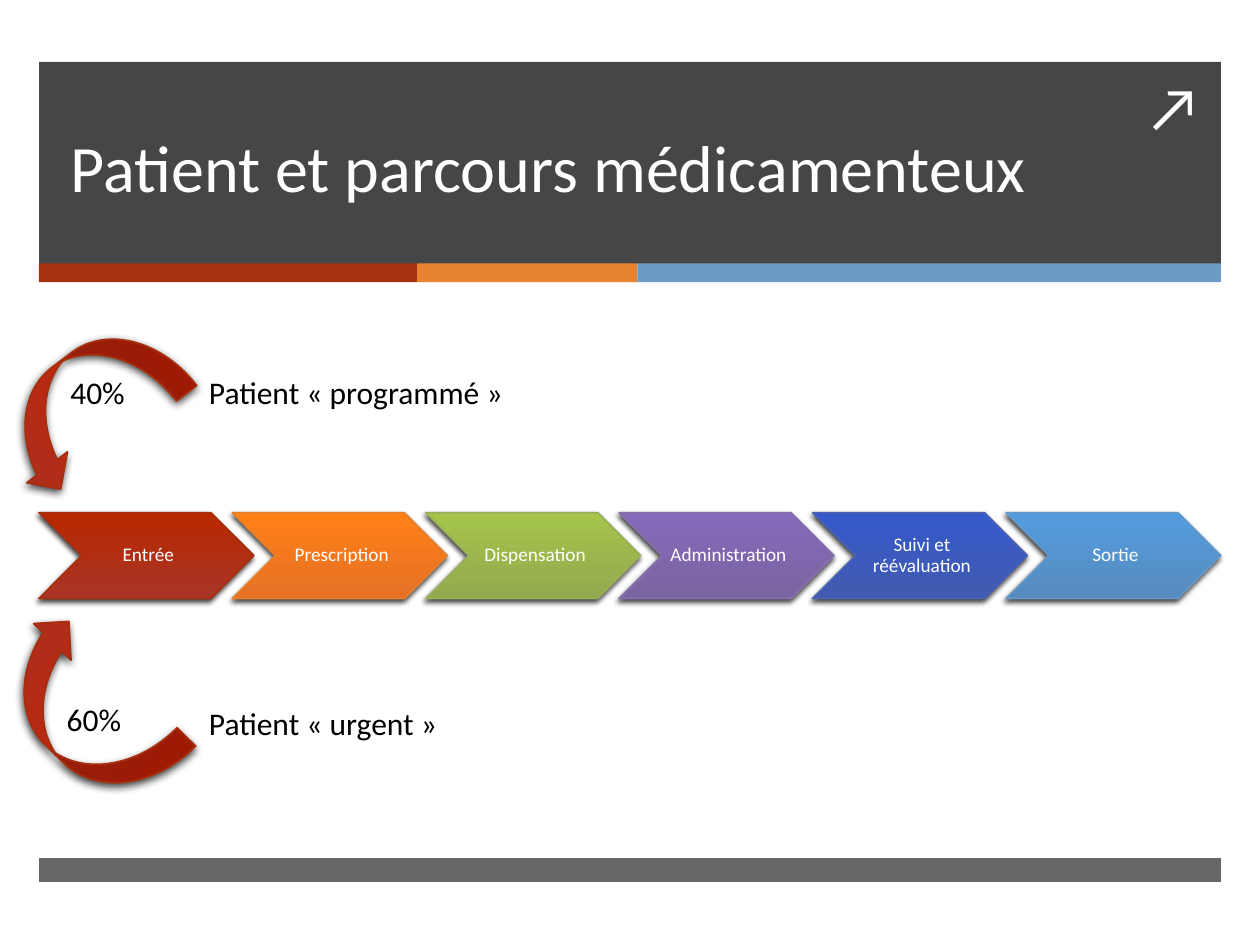
from dataclasses import dataclass

from lxml import etree
from pptx import Presentation
from pptx.dml.color import RGBColor
from pptx.enum.shapes import MSO_SHAPE
from pptx.enum.text import MSO_ANCHOR, MSO_AUTO_SIZE, PP_ALIGN
from pptx.oxml.ns import qn
from pptx.util import Pt

RECTANGLE = MSO_SHAPE.RECTANGLE
CHEVRON = MSO_SHAPE.CHEVRON
RIGHT_ARROW = MSO_SHAPE.CURVED_RIGHT_ARROW
LEFT_ARROW = MSO_SHAPE.CURVED_LEFT_ARROW
MIDDLE, BOTTOM = MSO_ANCHOR.MIDDLE, MSO_ANCHOR.BOTTOM
LEFT, CENTER = PP_ALIGN.LEFT, PP_ALIGN.CENTER
FIT_SHAPE, NO_FIT = MSO_AUTO_SIZE.SHAPE_TO_FIT_TEXT, MSO_AUTO_SIZE.NONE

FONT = "Calibri"
WHITE, BLACK, CHARCOAL = "FFFFFF", "000000", "262626"
BAND_LEFT, BAND_WIDTH = 22.3, 675.4
STEP_TOP, STEP_HEIGHT, STEP_PITCH = 293, 49, 0.9


@dataclass
class Box:
    left: float
    top: float
    width: float
    height: float

    def lengths(self):
        return Pt(self.left), Pt(self.top), Pt(self.width), Pt(self.height)


@dataclass
class Paint:
    bottom: str
    top: str
    line: str


@dataclass
class Step:
    label: str
    paint: Paint


@dataclass
class Strip:
    width: float
    color: str


@dataclass
class Arrow:
    kind: MSO_SHAPE
    box: Box
    rotation: float


@dataclass
class Label:
    text: str
    box: Box
    size: float = 18
    color: str = BLACK


STRIPS = [Strip(216, "A63212"), Strip(126, "E68230"), Strip(333.4, "6B9BC7")]
STEPS = [
    Step("Entrée", Paint("A93527", "B82800", "A62F0E")),
    Step("Prescription", Paint("E67125", "FF8017", "E57F2A")),
    Step("Dispensation", Paint("92AA4F", "A5C44A", "99AE5A")),
    Step("Administration", Paint("7A65A2", "8569BA", "8672AA")),
    Step("Suivi et réévaluation", Paint("425AAF", "3559CB", "4A62B1")),
    Step("Sortie", Paint("568BBF", "549CDE", "6698C5")),
]
ARROW_PAINT = Paint("A93221", "CB1D00", "A62F0E")
ARROWS = [
    Arrow(RIGHT_ARROW, Box(20.9, 175, 58.3, 112.3), 52.7),
    Arrow(LEFT_ARROW, Box(19.4, 348.5, 59.8, 116.6), 134.5),
]
LABELS = [
    Label("↗", Box(648, 35.3, 46, 51), 36, WHITE),
    Label("Patient «\u00a0programmé\u00a0»", Box(112.3, 209.5, 185.8, 29)),
    Label("40%", Box(33.1, 209.5, 46, 29)),
    Label("Patient « urgent »", Box(112.3, 398.9, 147.6, 29)),
    Label("60%", Box(31, 396.7, 46, 29)),
]


def rgb(color: str) -> RGBColor:
    """Turn a hex string into a colour."""
    return RGBColor.from_string(color)


def write(frame, text: str, size: float, color: str, align=LEFT):
    """Fill a text frame with one formatted paragraph and return it."""
    frame.text = text
    para = frame.paragraphs[0]
    para.alignment = align
    para.font.name, para.font.size = FONT, Pt(size)
    para.font.color.rgb = rgb(color)
    return para


def add_band(page, box: Box, color: str, opacity: int = 100) -> None:
    """Draw a flat rectangle, optionally see-through."""
    band = page.shapes.add_shape(RECTANGLE, *box.lengths())
    band.shadow.inherit = False
    band.fill.solid()
    band.fill.fore_color.rgb = rgb(color)
    band.line.fill.background()
    if opacity < 100:
        tone = band.element.spPr.find(qn("a:solidFill")).find(qn("a:srgbClr"))
        etree.SubElement(tone, qn("a:alpha"), val=str(opacity * 1000))


def add_glossy(page, kind: MSO_SHAPE, box: Box, paint: Paint, blur: float):
    """Draw a shape with a vertical gradient, an outline and a shadow."""
    shape = page.shapes.add_shape(kind, *box.lengths())
    shape.fill.gradient()
    shape.fill.gradient_angle = 90
    for stop, color in zip(shape.fill.gradient_stops, (paint.bottom, paint.top)):
        stop.color.rgb = rgb(color)
    shape.line.color.rgb = rgb(paint.line)
    shape.line.width = Pt(1)
    shape.shadow.inherit = False
    effects = shape.element.spPr.find(qn("a:effectLst"))
    shadow = etree.SubElement(
        effects, qn("a:outerShdw"), blurRad=str(Pt(blur)), dist=str(Pt(2)),
        dir=str(110 * 60000), rotWithShape="0")
    tone = etree.SubElement(shadow, qn("a:srgbClr"), val=BLACK)
    etree.SubElement(tone, qn("a:alpha"), val="75000")
    return shape


def add_step(page, step: Step, box: Box) -> None:
    """Draw one labelled chevron of the process."""
    frame = add_glossy(page, CHEVRON, box, step.paint, 3).text_frame
    frame.word_wrap = True
    frame.vertical_anchor = MIDDLE
    frame.margin_left = Pt(3.6)
    frame.margin_top = frame.margin_right = frame.margin_bottom = Pt(1.4)
    write(frame, step.label, 11, WHITE, CENTER).line_spacing = 0.9


def add_label(page, label: Label) -> None:
    """Write one line of text in a box that fits it."""
    frame = page.shapes.add_textbox(*label.box.lengths()).text_frame
    frame.word_wrap = False
    frame.auto_size = FIT_SHAPE
    write(frame, label.text, label.size, label.color)


def place_title(page, text: str, box: Box) -> None:
    """Format the title placeholder and bring it to the front."""
    title = page.shapes.title
    title.left, title.top, title.width, title.height = box.lengths()
    frame = title.text_frame
    frame.auto_size = NO_FIT
    frame.vertical_anchor = BOTTOM
    write(frame, text, 37.8, WHITE).line_spacing = Pt(46)
    title.element.getparent().append(title.element)


def main() -> None:
    """Build the slide and save it."""
    deck = Presentation()
    deck.slide_width, deck.slide_height = Pt(720), Pt(540)
    page = deck.slides.add_slide(deck.slide_layouts[5])

    add_band(page, Box(BAND_LEFT, 35.3, BAND_WIDTH, 115.5), CHARCOAL, 85)
    left = BAND_LEFT
    for strip in STRIPS:
        add_band(page, Box(left, 150.5, strip.width, 10.8), strip.color)
        left += strip.width
    add_band(page, Box(BAND_LEFT, 490.3, BAND_WIDTH, 13.7), CHARCOAL, 70)
    place_title(page, "Patient et parcours médicamenteux", Box(33.1, 35.3, 615, 85.7))

    width = BAND_WIDTH / (1 + STEP_PITCH * (len(STEPS) - 1))
    for index, step in enumerate(STEPS):
        left = BAND_LEFT + index * width * STEP_PITCH
        add_step(page, step, Box(left, STEP_TOP, width, STEP_HEIGHT))
    for arrow in ARROWS:
        add_glossy(page, arrow.kind, arrow.box, ARROW_PAINT, 5).rotation = arrow.rotation
    for label in LABELS:
        add_label(page, label)

    deck.save("out.pptx")


if __name__ == "__main__":
    main()
